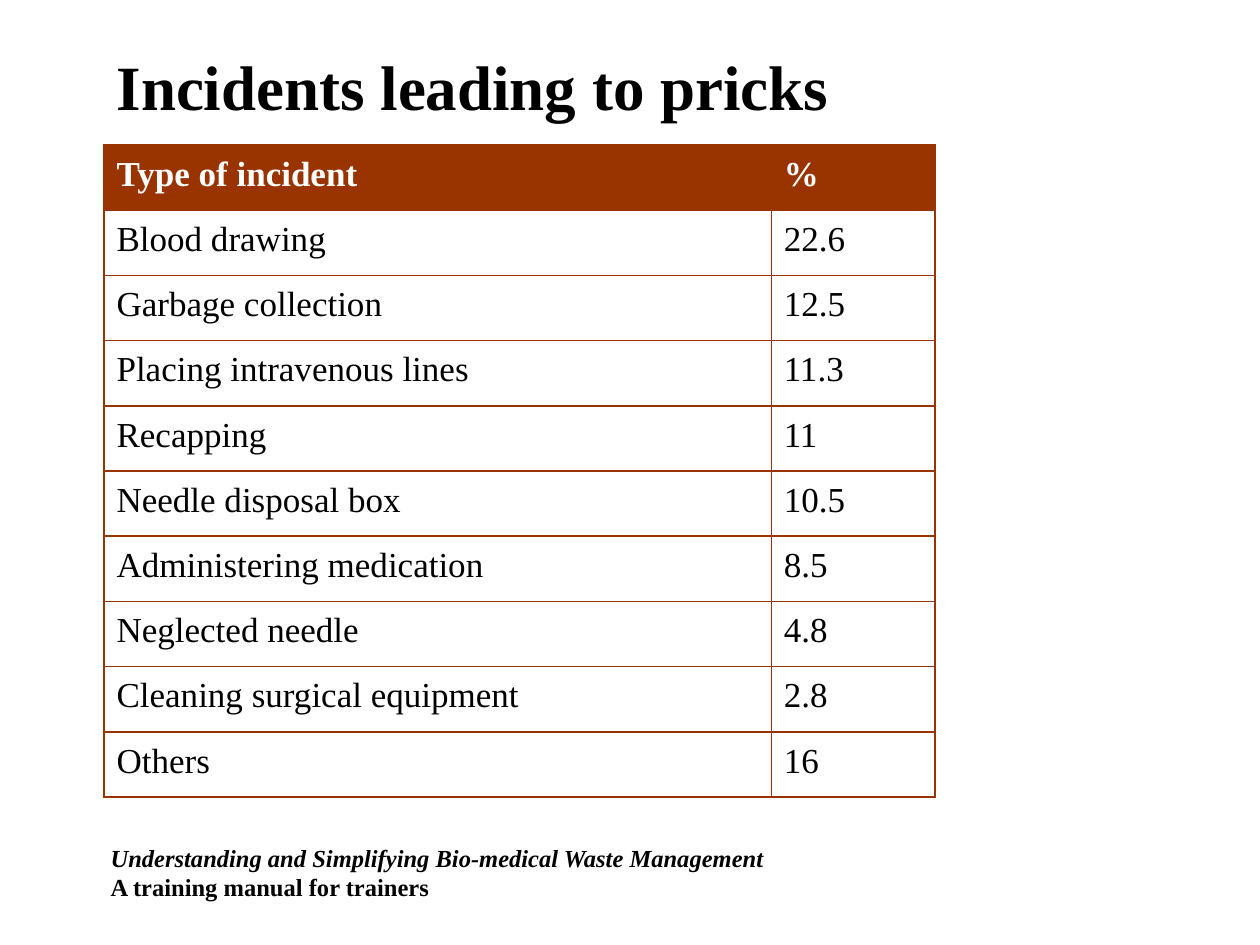
import pptx
import pptx.util
import pptx.dml.color
import pptx.enum.text
import pptx.oxml.ns
import lxml.etree

Cm, Pt = pptx.util.Cm, pptx.util.Pt
COLORS = {"rust": "993300", "white": "FFFFFF", "black": "000000"}
FONT = "Times New Roman"
ROWS = [
    ("Type of incident", "%"),
    ("Blood drawing", "22.6"),
    ("Garbage collection", "12.5"),
    ("Placing intravenous lines", "11.3"),
    ("Recapping", "11"),
    ("Needle disposal box", "10.5"),
    ("Administering medication", "8.5"),
    ("Neglected needle", "4.8"),
    ("Cleaning surgical equipment", "2.8"),
    ("Others", "16"),
]


def write(paragraph, text, color, **formats):
    span = paragraph.add_run()
    span.text = text
    span.font.color.rgb = pptx.dml.color.RGBColor.from_string(COLORS[color])
    for name, value in {"name": FONT, **formats}.items():
        setattr(span.font, name, value)


def add_borders(cell):
    properties = cell._tc.get_or_add_tcPr()
    qn = pptx.oxml.ns.qn
    for position, side in enumerate(("lnL", "lnR", "lnT", "lnB")):
        line = lxml.etree.Element(qn(f"a:{side}"), w=str(Pt(1)))
        fill = lxml.etree.SubElement(line, qn("a:solidFill"))
        lxml.etree.SubElement(fill, qn("a:srgbClr"), val=COLORS["rust"])
        properties.insert(position, line)


deck = pptx.Presentation()
deck.slide_width, deck.slide_height = Cm(25.4), Cm(19.05)
page = deck.slides.add_slide(deck.slide_layouts[6])

# Title
title = page.shapes.add_textbox(Cm(2.1), Cm(0.71), Cm(18), Cm(2.2)).text_frame
title.word_wrap = True
title.vertical_anchor = pptx.enum.text.MSO_ANCHOR.MIDDLE
title.paragraphs[0].line_spacing = 0.9
write(title.paragraphs[0], "Incidents leading to pricks", "black", size=Pt(36), bold=True)

# Incident table
row_height = Cm(1.315)
frame = page.shapes.add_table(
    len(ROWS), 2, Cm(2.1), Cm(2.92), Cm(16.75), row_height * len(ROWS))
table = frame.table
for column, width in zip(table.columns, (13.45, 3.3)):
    column.width = Cm(width)
margins = {"margin_left": Cm(0.25), "margin_right": Cm(0.25),
           "margin_top": Cm(0.2), "margin_bottom": Cm(0.2)}
for row_index, texts in enumerate(ROWS):
    table.rows[row_index].height = row_height
    header = row_index == 0
    for column_index, text in enumerate(texts):
        cell = table.cell(row_index, column_index)
        for name, value in margins.items():
            setattr(cell, name, value)
        if header:
            cell.fill.solid()
            cell.fill.fore_color.rgb = pptx.dml.color.RGBColor.from_string(COLORS["rust"])
        else:
            cell.fill.background()
        add_borders(cell)
        write(cell.text_frame.paragraphs[0], text,
              "white" if header else "black", size=Pt(20), bold=header)

# Footer
footer = page.shapes.add_textbox(Cm(1.98), Cm(16.87), Cm(21.03), Cm(1.6)).text_frame
footer.word_wrap = True
write(footer.paragraphs[0], "Understanding and Simplifying Bio-medical Waste Management",
      "black", size=Pt(14), bold=True, italic=True)
write(footer.add_paragraph(), "A training manual for trainers",
      "black", size=Pt(14), bold=True, italic=False)

deck.save("out.pptx")
